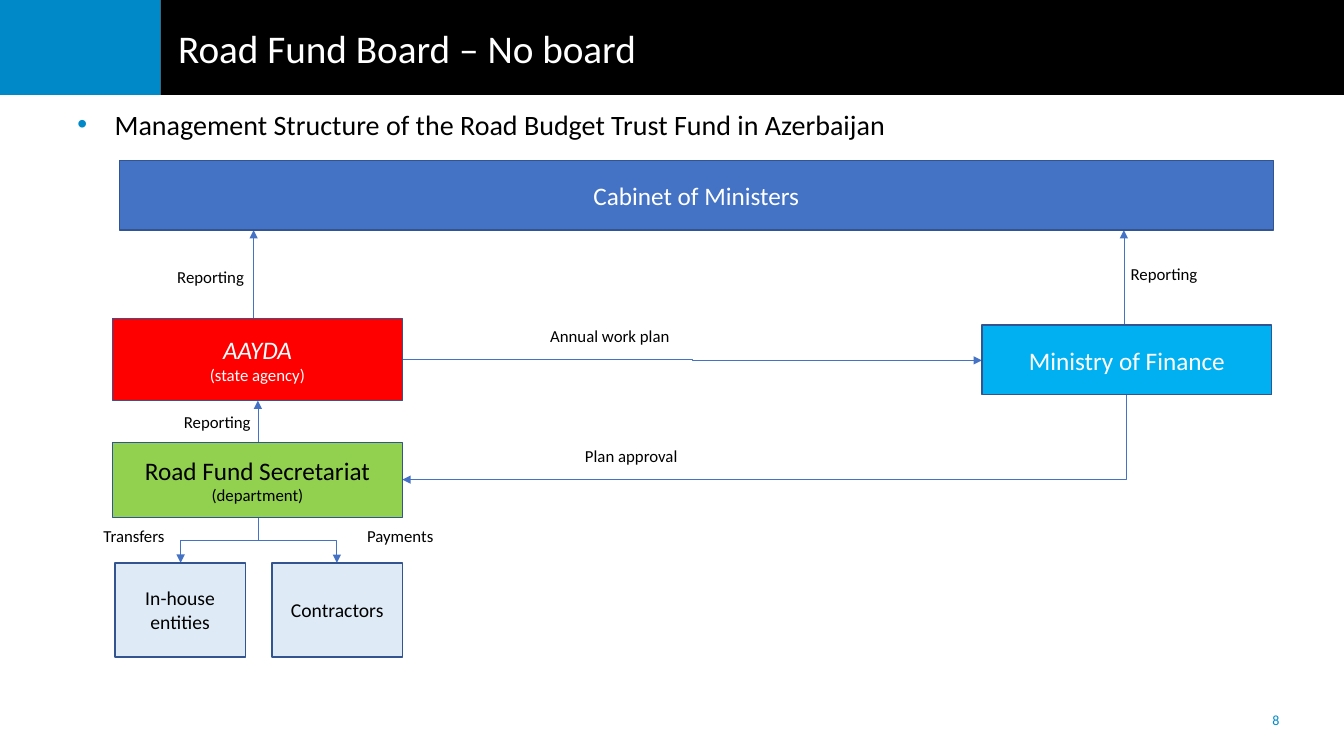
"""Build the slide on the management structure of the Road Budget Trust Fund."""
from typing import NamedTuple

from lxml import etree
from pptx import Presentation
from pptx import util as u
from pptx.dml.color import RGBColor
from pptx.enum import shapes, text
from pptx.oxml import ns

WHITE = RGBColor(0xFF, 0xFF, 0xFF)
BLACK = RGBColor(0x00, 0x00, 0x00)
ACCENT = RGBColor(0x00, 0x89, 0xC9)
BLUE = RGBColor(0x44, 0x72, 0xC4)
OUTLINE = RGBColor(0x32, 0x54, 0x91)
RED = RGBColor(0xFF, 0x00, 0x00)
GREEN = RGBColor(0x92, 0xD0, 0x50)
SKY = RGBColor(0x00, 0xB0, 0xF0)
PALE = RGBColor(0xDE, 0xEB, 0xF7)

FONT = "Calibri"
WIDTH, HEIGHT = u.Inches(13.33), u.Inches(7.5)
COLUMNS, ROWS = 16, 9
LEFT, CENTER = text.PP_ALIGN.LEFT, text.PP_ALIGN.CENTER


class Area(NamedTuple):
    """A rectangle in grid columns and rows."""
    col: float
    row: float
    cols: float
    rows: float


class Band(NamedTuple):
    """A plain block of the header."""
    area: Area
    fill: RGBColor


class Body(NamedTuple):
    """An institution in the structure."""
    area: Area
    name: str
    fill: RGBColor
    color: RGBColor
    size: int = 18
    role: str = ""
    italic: bool = False


class Label(NamedTuple):
    """A caption beside an arrow."""
    area: Area
    wording: str
    align: text.PP_ALIGN = CENTER
    size: int = 12
    color: RGBColor = BLACK
    anchor: text.MSO_ANCHOR = text.MSO_ANCHOR.TOP


class Flow(NamedTuple):
    """An arrow between two grid points."""
    start: tuple[float, float]
    end: tuple[float, float]
    preset: str = "line"
    downward: bool = False


BANDS = [
    Band(Area(1.91, 0, 14.09, 1.13), BLACK),
    Band(Area(0, 0, 1.91, 1.13), ACCENT),
]
BODIES = [
    Body(Area(1.42, 1.91, 13.74, 0.83), "Cabinet of Ministers", BLUE, WHITE),
    Body(Area(1.34, 3.79, 3.45, 0.98), "AAYDA", RED, WHITE,
         role="(state agency)", italic=True),
    Body(Area(11.69, 3.87, 3.45, 0.83), "Ministry of Finance", SKY, WHITE),
    Body(Area(1.34, 5.27, 3.45, 0.89), "Road Fund Secretariat", GREEN, BLACK,
         role="(department)"),
    Body(Area(1.37, 6.7, 1.55, 1.12), "In-house entities", PALE, BLACK, 14),
    Body(Area(3.24, 6.7, 1.55, 1.12), "Contractors", PALE, BLACK, 14),
]
LABELS = [
    Label(Area(2.11, 3.17, 2.09, 0.49), "Reporting", LEFT),
    Label(Area(13.46, 3.14, 2.09, 0.49), "Reporting", LEFT),
    Label(Area(2.19, 4.9, 1.24, 0.46), "Reporting", LEFT),
    Label(Area(5.8, 3.88, 2.92, 0.44), "Annual work plan"),
    Label(Area(6.38, 5.31, 2.27, 0.41), "Plan approval"),
    Label(Area(0.91, 6.26, 1.37, 0.49), "Transfers"),
    Label(Area(4.08, 6.26, 1.37, 0.49), "Payments"),
    Label(Area(14.75, 8.34, 0.88, 0.47), "8", CENTER, 10, ACCENT,
          text.MSO_ANCHOR.MIDDLE),
]
FLOWS = [
    Flow((3.02, 3.79), (3.02, 2.74)),
    Flow((13.38, 3.87), (13.38, 2.74)),
    Flow((3.07, 5.27), (3.07, 4.77)),
    Flow((4.79, 4.28), (11.69, 4.29), "bentConnector3"),
    Flow((13.41, 4.7), (4.79, 5.71), "bentConnector2", True),
    Flow((3.07, 6.16), (2.15, 6.7), "bentConnector3", True),
    Flow((3.07, 6.16), (4.01, 6.7), "bentConnector3", True),
]


def x(col: float) -> int:
    """Turn grid columns into a length."""
    return round(WIDTH * col / COLUMNS)


def y(row: float) -> int:
    """Turn grid rows into a length."""
    return round(HEIGHT * row / ROWS)


def place(area: Area) -> tuple[int, int, int, int]:
    """Turn an area into left, top, width and height."""
    return x(area.col), y(area.row), x(area.cols), y(area.rows)


def style(paragraph, size: int, color: RGBColor, align=LEFT, italic=False) -> None:
    """Format a paragraph and its runs."""
    paragraph.alignment = align
    for run in paragraph.runs:
        run.font.name = FONT
        run.font.size = u.Pt(size)
        run.font.color.rgb = color
        run.font.italic = italic


def clear_insets(frame) -> None:
    """Wrap the text and remove its margins."""
    frame.word_wrap = True
    frame.margin_left = frame.margin_right = 0
    frame.margin_top = frame.margin_bottom = 0


def fill_placeholder(holder, area: Area, wording: str, size: int, color: RGBColor):
    """Move a placeholder, write in it and return its paragraph."""
    holder.left, holder.top, holder.width, holder.height = place(area)
    frame = holder.text_frame
    frame.text = wording
    frame.auto_size = text.MSO_AUTO_SIZE.NONE
    style(frame.paragraphs[0], size, color)
    return frame.paragraphs[0]


def color_bullet(paragraph, color: RGBColor) -> None:
    """Set the hanging indent and bullet of a paragraph."""
    props = paragraph._p.get_or_add_pPr()
    props.set("marL", str(u.Inches(0.37)))
    props.set("indent", str(-u.Inches(0.37)))
    tint = etree.SubElement(props, ns.qn("a:buClr"))
    etree.SubElement(tint, ns.qn("a:srgbClr"), val=str(color))
    etree.SubElement(props, ns.qn("a:buChar"), char="•")


def add_block(slide, area: Area, fill: RGBColor):
    """Add a flat rectangle without outline."""
    block = slide.shapes.add_shape(shapes.MSO_SHAPE.RECTANGLE, *place(area))
    block.shadow.inherit = False
    block.fill.solid()
    block.fill.fore_color.rgb = fill
    block.line.fill.background()
    return block


def add_body(slide, body: Body) -> None:
    """Add an institution with its name and role."""
    block = add_block(slide, body.area, body.fill)
    block.line.color.rgb = OUTLINE
    block.line.width = u.Pt(1)
    frame = block.text_frame
    clear_insets(frame)
    frame.vertical_anchor = text.MSO_ANCHOR.MIDDLE
    frame.text = body.name
    style(frame.paragraphs[0], body.size, body.color, CENTER, body.italic)
    if body.role:
        role = frame.add_paragraph()
        role.text = body.role
        style(role, 12, body.color, CENTER)


def add_label(slide, label: Label) -> None:
    """Add a caption."""
    frame = slide.shapes.add_textbox(*place(label.area)).text_frame
    clear_insets(frame)
    frame.vertical_anchor = label.anchor
    frame.text = label.wording
    style(frame.paragraphs[0], label.size, label.color, label.align)


def add_flow(slide, flow: Flow) -> None:
    """Add an arrow, turned a quarter when it sets out downward."""
    x1, y1, x2, y2 = x(flow.start[0]), y(flow.start[1]), x(flow.end[0]), y(flow.end[1])
    if flow.downward:
        mid_x, mid_y, half_w, half_h = (x1 + x2) // 2, (y1 + y2) // 2, (x2 - x1) // 2, (y2 - y1) // 2
        x1, y1, x2, y2 = mid_x - half_h, mid_y + half_w, mid_x + half_h, mid_y - half_w
    arrow = slide.shapes.add_connector(shapes.MSO_CONNECTOR.STRAIGHT, x1, y1, x2, y2)
    arrow.line.color.rgb = BLUE
    arrow.line.width = u.Pt(0.5)
    props = arrow._element.spPr
    props.find(ns.qn("a:prstGeom")).set("prst", flow.preset)
    if flow.downward:
        props.find(ns.qn("a:xfrm")).set("rot", "5400000")
    etree.SubElement(props.find(ns.qn("a:ln")), ns.qn("a:tailEnd"), type="triangle")
    etree.SubElement(props, ns.qn("a:effectLst"))


def main() -> None:
    """Build and save the slide."""
    deck = Presentation()
    deck.slide_width, deck.slide_height = WIDTH, HEIGHT
    slide = deck.slides.add_slide(deck.slide_layouts[1])
    for depth, band in enumerate(BANDS, start=2):
        slide.shapes._spTree.insert(depth, add_block(slide, band.area, band.fill)._element)
    fill_placeholder(slide.shapes.title, Area(2, 0.1, 14, 0.95),
                     "Road Fund Board – No board", 28, WHITE)
    topic = fill_placeholder(slide.placeholders[1], Area(0.8, 1.22, 15.2, 7.13),
                             "Management Structure of the Road Budget Trust Fund in Azerbaijan",
                             20, BLACK)
    color_bullet(topic, ACCENT)
    for flow in FLOWS:
        add_flow(slide, flow)
    for body in BODIES:
        add_body(slide, body)
    for label in LABELS:
        add_label(slide, label)
    deck.save("out.pptx")


if __name__ == "__main__":
    main()
